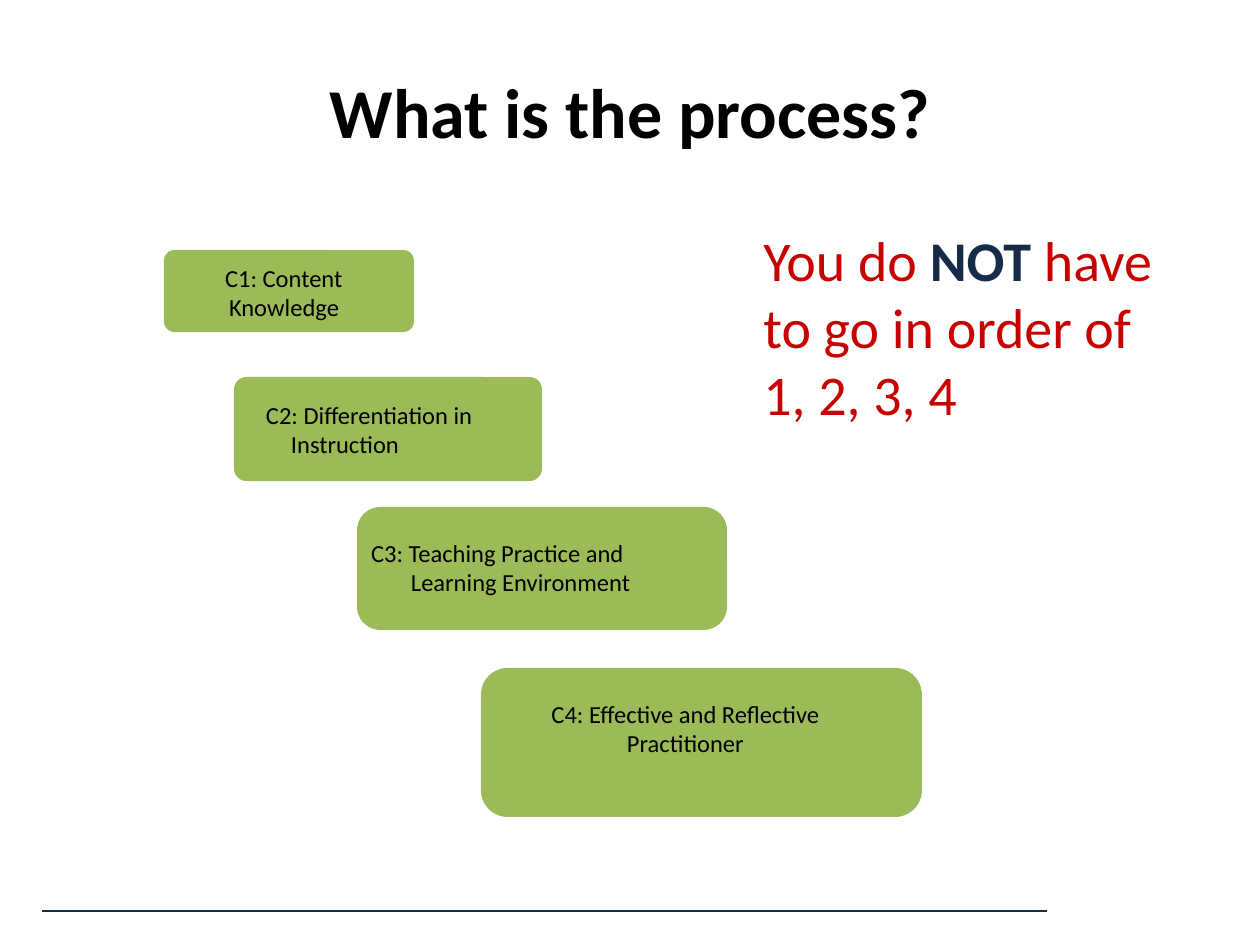
"""Build the slide that shows the four criteria as descending steps."""
from lxml import etree
from pptx import Presentation
from pptx.dml.color import RGBColor
from pptx.enum.shapes import MSO_CONNECTOR, MSO_SHAPE
from pptx.enum.text import PP_ALIGN
from pptx.oxml.ns import qn
from pptx.util import Emu, Pt

EMU_PER_PX = 914400 / 126
FONT = "Calibri"
BLACK, GREEN, NAVY, RED = "000000", "9BBA58", "162B48", "C70000"
LEFT, CENTER = PP_ALIGN.LEFT, PP_ALIGN.CENTER
ROUNDED = MSO_SHAPE.ROUNDED_RECTANGLE
STRAIGHT = MSO_CONNECTOR.STRAIGHT

# Box, corner radius, text box, margin, first-line indent, alignment, lines
STEPS = [
    ((164, 250, 250, 82), 11, (224, 263, 145, 59), 5, -4, LEFT,
     ("C1: Content", "Knowledge")),
    ((234, 377, 308, 104), 13, (263, 400, 304, 59), 28, -25, LEFT,
     ("C2: Differentiation in", "Instruction")),
    ((357, 507, 370, 123), 23, (368, 538, 348, 59), 43, -40, LEFT,
     ("C3: Teaching Practice and", "Learning Environment")),
    ((481, 668, 441, 149), 27, (515, 699, 340, 59), 1, 0, CENTER,
     ("C4: Effective and Reflective", "Practitioner")),
]


def px(length):
    """Turn pixels into EMU."""
    return Emu(round(length * EMU_PER_PX))


def color(value):
    """Turn a hex string into a colour."""
    return RGBColor.from_string(value)


def add_text_box(page, area, inset=True):
    """Add a wrapping text box and return its first paragraph."""
    frame = page.shapes.add_textbox(*map(px, area)).text_frame
    frame.word_wrap = True
    if not inset:
        frame.margin_left = frame.margin_right = 0
        frame.margin_top = frame.margin_bottom = 0
    return frame.paragraphs[0]


def add_span(para, text, size, fill, bold=False):
    """Add one run of text."""
    span = para.add_run()
    span.text = text
    span.font.name = FONT
    span.font.size = Pt(size)
    span.font.bold = bold
    span.font.color.rgb = color(fill)


def add_rounded_box(page, area, radius):
    """Add a green box with the given corner radius."""
    box = page.shapes.add_shape(ROUNDED, *map(px, area))
    box.adjustments[0] = round(radius / min(area[2:]), 2)
    box.shadow.inherit = False
    box.fill.solid()
    box.fill.fore_color.rgb = color(GREEN)
    box.line.fill.background()


def add_label(page, area, margin, indent, align, lines):
    """Add the indented label of one step."""
    para = add_text_box(page, area, inset=False)
    para.alignment = align
    properties = para._p.get_or_add_pPr()
    properties.set("marL", str(px(margin)))
    properties.set("indent", str(px(indent)))
    first, second = lines
    add_span(para, first, 14, BLACK)
    para.add_line_break()
    add_span(para, second, 14, BLACK)


def add_rule(page, left, right, y):
    """Add the thin line at the foot of the page."""
    rule = page.shapes.add_connector(STRAIGHT, px(left), px(y), px(right), px(y))
    rule.line.color.rgb = color(NAVY)
    rule.line.width = Pt(0.75)
    etree.SubElement(rule._element.spPr, qn("a:effectLst"))


def add_title(page):
    """Add the centred title."""
    para = add_text_box(page, (42, 62, 1176, 125))
    para.alignment = CENTER
    add_span(para, "What is the process?", 40, BLACK, bold=True)


def add_remark(page):
    """Add the red remark about the order."""
    para = add_text_box(page, (751, 219, 466, 217))
    add_span(para, "You do ", 32, RED)
    add_span(para, "NOT", 32, NAVY, bold=True)
    add_span(para, " have to go in order of", 32, RED)
    para.add_line_break()
    add_span(para, "1, 2, 3, 4", 32, RED)


def main():
    """Build and save the deck."""
    deck = Presentation()
    deck.slide_width, deck.slide_height = px(1260), px(945)
    page = deck.slides.add_slide(deck.slide_layouts[6])
    add_rule(page, 42, 1047, 911)
    add_title(page)
    for area, radius, label_area, margin, indent, align, lines in STEPS:
        add_rounded_box(page, area, radius)
        add_label(page, label_area, margin, indent, align, lines)
    add_remark(page)
    deck.save("out.pptx")


if __name__ == "__main__":
    main()
